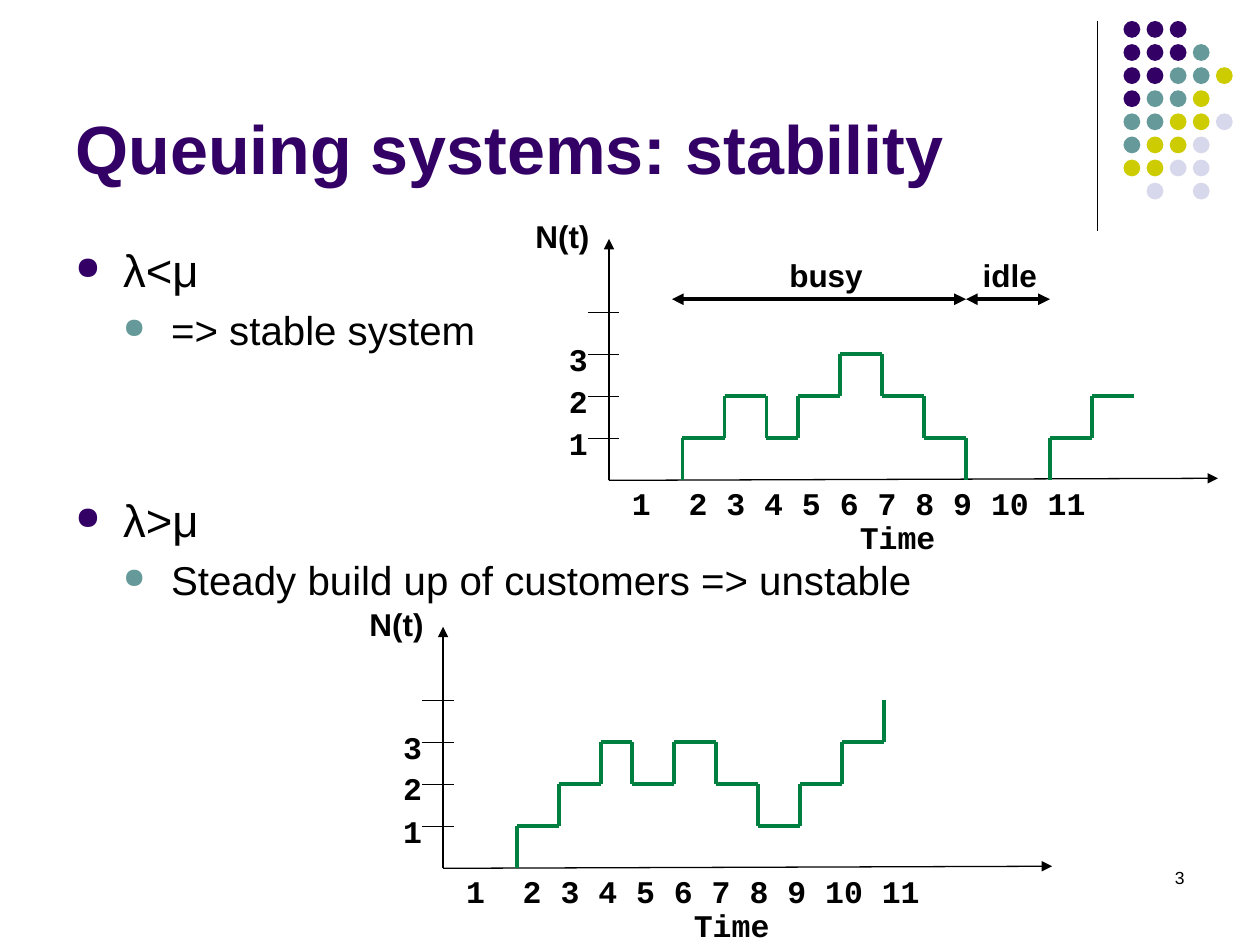
from itertools import pairwise

from lxml import etree
from pptx import Presentation
from pptx.dml.color import RGBColor
from pptx.enum.shapes import MSO_CONNECTOR, MSO_SHAPE
from pptx.enum.text import MSO_ANCHOR, MSO_AUTO_SIZE, PP_ALIGN
from pptx.oxml.ns import qn
from pptx.util import Inches, Pt

STRAIGHT = MSO_CONNECTOR.STRAIGHT
OVAL = MSO_SHAPE.OVAL
TOP, BOTTOM = MSO_ANCHOR.TOP, MSO_ANCHOR.BOTTOM
GROW = MSO_AUTO_SIZE.SHAPE_TO_FIT_TEXT
LEFT, RIGHT = PP_ALIGN.LEFT, PP_ALIGN.RIGHT

COLORS = {"black": "000000", "purple": "330066", "teal": "669999",
          "lime": "CCCC00", "lilac": "D8D8EC", "green": "008040"}
CELL = Inches(1) / 12  # the slide is a grid of 120 columns and 90 rows
LEVEL = 4  # rows for one customer in the system

presentation = Presentation()
presentation.slide_width = round(120 * CELL)
presentation.slide_height = round(90 * CELL)
slide = presentation.slides.add_slide(presentation.slide_layouts[6])


def add_text(text, column, row, columns, rows, size=18, font="Arial", color="black",
             bold=True, align=LEFT, anchor=TOP, wrap=False):
    """Place a text box on the grid and return its text frame."""
    box = slide.shapes.add_textbox(*(round(n * CELL) for n in (column, row, columns, rows)))
    frame = box.text_frame
    frame.word_wrap = wrap
    frame.vertical_anchor = anchor
    if not wrap:
        frame.auto_size = GROW
    paragraph = frame.paragraphs[0]
    paragraph.alignment = align
    run = paragraph.add_run()
    run.text = text
    run.font.name, run.font.size, run.font.bold = font, Pt(size), bold
    run.font.color.rgb = RGBColor.from_string(COLORS[color])
    return frame


def add_line(start, end, color="black", width=0.75, arrows=()):
    """Join two (column, row) points; arrows names the ends with a triangle."""
    line = slide.shapes.add_connector(STRAIGHT, *(round(n * CELL) for n in (*start, *end)))
    line.line.color.rgb = RGBColor.from_string(COLORS[color])
    line.line.width = Pt(width)
    for arrow in arrows:
        etree.SubElement(line.line._get_or_add_ln(), qn(f"a:{arrow}"), type="triangle")
    etree.SubElement(line._element.spPr, qn("a:effectLst"))


# Corner decoration
add_line((104.5, 2), (104.5, 22))
DOT_COLORS = {"P": "purple", "T": "teal", "Y": "lime", "L": "lilac"}
DOT_ROWS = ["PPP", "PPPT", "PPTTY", "PTTY", "TTYYL", "TYYL", "YYLL", ".L.L"]
for row, letters in enumerate(DOT_ROWS):
    for column, letter in enumerate(letters):
        if letter not in DOT_COLORS:
            continue
        dot = slide.shapes.add_shape(OVAL, round((107 + 2.2 * column) * CELL),
                                     round((2 + 2.2 * row) * CELL),
                                     round(1.6 * CELL), round(1.6 * CELL))
        dot.shadow.inherit = False
        dot.fill.solid()
        dot.fill.fore_color.rgb = RGBColor.from_string(COLORS[DOT_COLORS[letter]])
        dot.line.fill.background()

# Title, bullets and slide number
add_text("3", 86, 82, 28, 6, size=10, bold=False, align=RIGHT, wrap=True)
add_text("Queuing systems: stability", 6, 1.5, 99, 17, size=39, color="purple",
         anchor=BOTTOM, wrap=True)
BULLETS = [("λ<μ", 0, 6), ("=> stable system", 1, 5),
           ("λ>μ", 0, 79), ("Steady build up of customers => unstable", 1, 5)]
LEVEL_STYLES = [(26, "purple"), (23, "teal")]
body = add_text(BULLETS[0][0], 6, 22.5, 108, 57.8, size=26, bold=False, wrap=True)
for index, (text, level, space) in enumerate(BULLETS):
    size, bullet_color = LEVEL_STYLES[level]
    if index == 0:
        paragraph = body.paragraphs[0]
    else:
        paragraph = body.add_paragraph()
        run = paragraph.add_run()
        run.text = text
        run.font.name, run.font.size = "Arial", Pt(size)
        run.font.color.rgb = RGBColor.from_string(COLORS["black"])
    paragraph.level = level
    paragraph.space_before = Pt(space)
    properties = paragraph._p.get_or_add_pPr()
    properties.set("marL", str(Inches(0.38 * (level + 1))))
    properties.set("indent", str(-Inches(0.38)))
    bullet = etree.SubElement(properties, qn("a:buClr"))
    etree.SubElement(bullet, qn("a:srgbClr"), val=COLORS[bullet_color])
    etree.SubElement(properties, qn("a:buSzPct"), val="70000")
    etree.SubElement(properties, qn("a:buChar"), char="●")

# Charts of N(t): origin, then runs of (column after the first arrival, customers)
CHARTS = [
    ((58, 45.75), [
        [(0, 0), (0, 1), (4, 2), (8, 1), (11, 2), (15, 3), (19, 2), (23, 1), (27, 0)],
        [(35, 0), (35, 1), (39, 2), (43, 2)]]),
    ((42.2, 82.7), [
        [(0, 0), (0, 1), (4, 2), (8, 3), (11, 2), (15, 3), (19, 2), (23, 1), (27, 2),
         (31, 3), (35, 4)]]),
]
for (left, base), runs in CHARTS:
    add_text("Time", left + 22.7, base + 3, 11.4, 4.8, font="Courier New")
    times = add_text("1", left + 1, base - 0.25, 47.2, 4.8, font="Courier New")
    first_run = times.paragraphs[0].runs[0]
    first_run._r.get_or_add_rPr().set("spc", "1080")  # one extra character of gap
    later_run = times.paragraphs[0].add_run()
    later_run.text = " 2 3 4 5 6 7 8 9 10 11"
    later_run.font.name, later_run.font.size, later_run.font.bold = "Courier New", Pt(18), True
    later_run.font.color.rgb = RGBColor.from_string(COLORS["black"])
    add_text("N(t)", left - 8.2, base - 25.7, 7.6, 4.8)

    add_line((left, base), (left + 58, base - 0.2), arrows=["tailEnd"])
    add_line((left, base), (left, base - 23), arrows=["tailEnd"])
    for customers in range(1, 5):
        tick_row = base - LEVEL * customers
        for tick_column in (left - 2, left - 1):
            add_line((tick_column, tick_row), (tick_column + 2, tick_row))
        if customers < 4:
            add_text(str(customers), left - 5, tick_row - 2, 4.2, 4.8, font="Courier New")

    for steps in runs:
        points = [(left + 7 + time, base - LEVEL * customers) for time, customers in steps]
        for (column, row), (next_column, next_row) in pairwise(points):
            if next_column != column:
                add_line((column, row), (next_column, row), "green", 2.25)
            if next_row != row:
                add_line((next_column, row), (next_column, next_row), "green", 2.25)

# Busy and idle periods of the stable system
PERIODS = [("busy", 64, 92, 74, 9.4), ("idle", 92, 100, 92.4, 7.6)]
for name, start, end, label_column, label_columns in PERIODS:
    add_line((start, 28.5), (end, 28.5), width=2.25, arrows=["headEnd", "tailEnd"])
    add_text(name, label_column, 23.8, label_columns, 4.8)

presentation.save("out.pptx")
